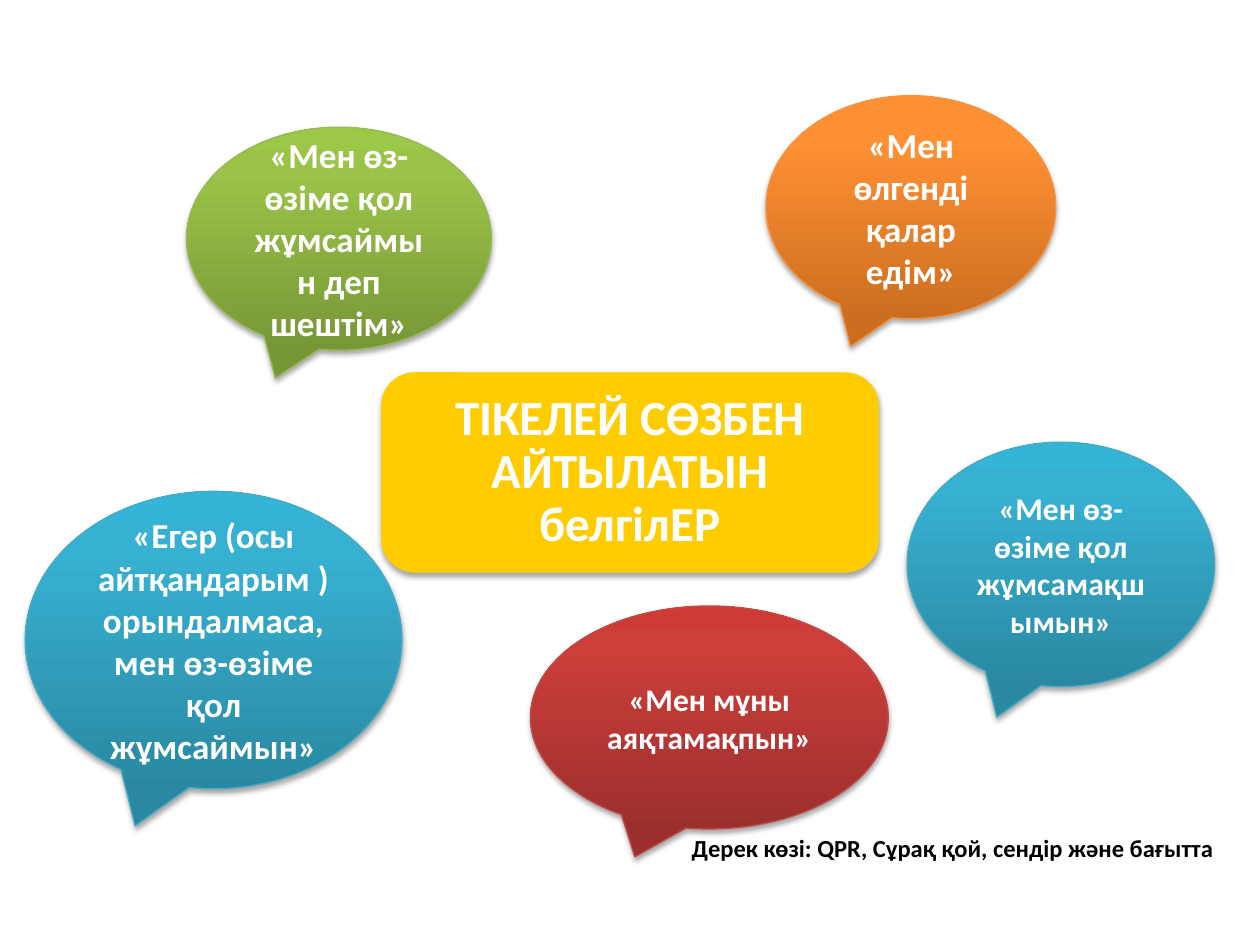
import pptx
import pptx.util
import pptx.dml.color
import pptx.enum.shapes
import pptx.enum.text
import pptx.oxml
import pptx.oxml.ns
from pptx.util import Inches

SHAPE = pptx.enum.shapes.MSO_SHAPE
ALIGN = pptx.enum.text.PP_ALIGN
MIDDLE = pptx.enum.text.MSO_ANCHOR.MIDDLE

THEME = {
    "font": "Calibri",
    "light": "FFFFFF",
    "dark": "000000",
    "topic": "FFCC00",
    "topic_size": 28,
    "source_size": 14,
    # gradient from the bottom up (0 %, 80 %, 100 %), then the outline
    "blue": (("2A88A2", "37B1D2", "34B4D6"), "46AAC5"),
    "orange": (("CC6E20", "FF9034", "FF9136"), "F69240"),
    "red": (("9C2F2D", "CB3E3A", "CE3B37"), "BF4C48"),
    "green": (("779737", "9BC348", "9DC746"), "98B955"),
}
STOPS = (0, 80, 100)

# text, colour, type size, (left, top, width, height)
QUOTES = [
    ("«Мен өз-өзіме қол жұмсамақшымын»", "blue", 18, (7.2, 3.51, 2.44, 1.94)),
    ("«Мен өлгенді қалар едім»", "orange", 20, (6.08, 0.76, 2.3, 1.77)),
    ("«Мен мұны аяқтамақпын»", "red", 18, (4.21, 4.81, 2.84, 1.77)),
    ("«Мен өз-өзіме қол жұмсаймын деп шештім»", "green", 20,
     (1.48, 1.01, 2.42, 1.77)),
    ("«Егер (осы айтқандарым ) орындалмаса, мен өз-өзіме қол жұмсаймын»",
     "blue", 20, (0.2, 3.9, 2.99, 2.36)),
]
TOPIC = ("ТІКЕЛЕЙ СӨЗБЕН АЙТЫЛАТЫН белгілЕР", (3.03, 2.96, 3.94, 1.58))
SOURCE = ("Дерек көзі: QPR, Сұрақ қой, сендір және бағытта",
          (0.28, 6.56, 9.45, 0.34))


def rgb(value):
    return pptx.dml.color.RGBColor.from_string(value)


def parse_drawing(xml):
    return pptx.oxml.parse_xml(
        xml.replace(">", f" {pptx.oxml.ns.nsdecls('a')}>", 1))


def write(sp, text, size, color, align):
    tf = sp.text_frame
    tf.word_wrap = True
    p = tf.paragraphs[0]
    p.text = text
    p.alignment = align
    p.font.name = THEME["font"]
    p.font.size = pptx.util.Pt(size)
    p.font.bold = True
    p.font.color.rgb = rgb(color)
    return tf


def fill_gradient(sp, colors):
    sp.fill.gradient()
    sp.fill.gradient_angle = 90
    stops = "".join(
        f'<a:gs pos="{pos * 1000}"><a:srgbClr val="{color}"/></a:gs>'
        for pos, color in zip(STOPS, colors))
    old = sp._element.spPr.find(".//" + pptx.oxml.ns.qn("a:gsLst"))
    old.getparent().replace(old, parse_drawing(f"<a:gsLst>{stops}</a:gsLst>"))


def add_soft_shadow(sp):
    sp.shadow.inherit = False
    effects = sp._element.spPr.find(pptx.oxml.ns.qn("a:effectLst"))
    effects.append(parse_drawing(
        '<a:outerShdw blurRad="40000" dist="23000" dir="5400000" '
        'rotWithShape="0"><a:srgbClr val="000000"><a:alpha val="35000"/>'
        '</a:srgbClr></a:outerShdw>'))


def add_panel(s, kind, box, text, size, line, margins):
    """Add an outlined, shadowed shape with centred light text."""
    sp = s.shapes.add_shape(kind, *map(Inches, box))
    sp.line.color.rgb = rgb(line)
    sp.line.width = pptx.util.Pt(0.75)
    add_soft_shadow(sp)
    tf = write(sp, text, size, THEME["light"], ALIGN.CENTER)
    tf.vertical_anchor = MIDDLE
    tf.margin_left = tf.margin_right = Inches(margins[0])
    tf.margin_top = tf.margin_bottom = Inches(margins[1])
    return sp


def add_quote(s, text, color, size, box):
    gradient, line = THEME[color]
    sp = add_panel(s, SHAPE.OVAL_CALLOUT, box, text, size, line, (0.12, 0.12))
    fill_gradient(sp, gradient)


def add_topic(s, text, box):
    sp = add_panel(s, SHAPE.ROUNDED_RECTANGLE, box, text, THEME["topic_size"],
                   THEME["topic"], (0.29, 0.14))
    sp.fill.solid()
    sp.fill.fore_color.rgb = rgb(THEME["topic"])
    sp.text_frame.paragraphs[0].line_spacing = 0.9


def main():
    prs = pptx.Presentation()
    prs.slide_width, prs.slide_height = Inches(10), Inches(7.5)
    s = prs.slides.add_slide(prs.slide_layouts.get_by_name("Blank"))
    for quote in QUOTES:
        add_quote(s, *quote)
    add_topic(s, *TOPIC)
    text, box = SOURCE
    source = s.shapes.add_textbox(*map(Inches, box))
    write(source, text, THEME["source_size"], THEME["dark"], ALIGN.RIGHT)
    prs.save("out.pptx")


if __name__ == "__main__":
    main()
